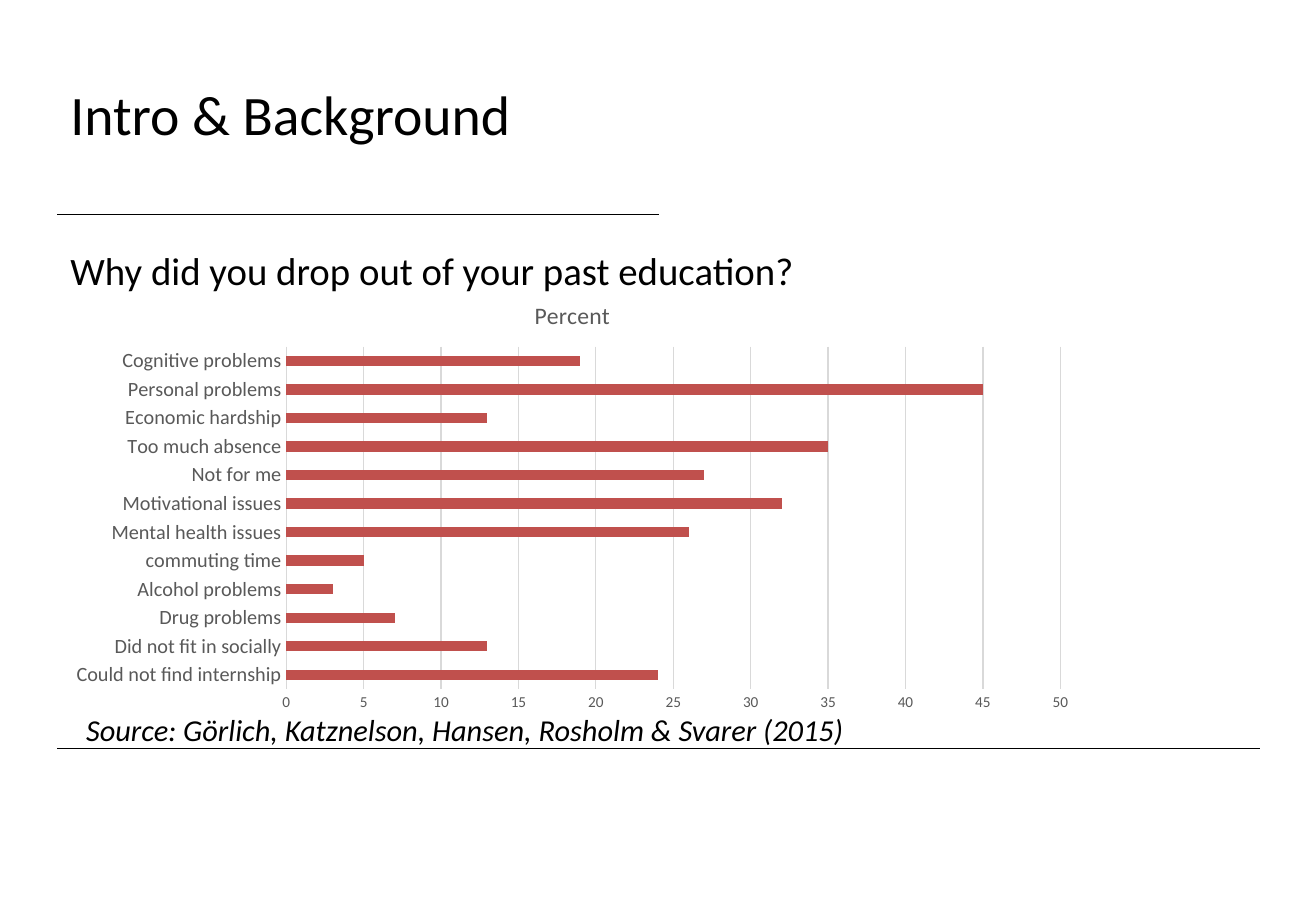
from pptx import Presentation
from pptx.chart.data import CategoryChartData
from pptx.dml.color import RGBColor
from pptx.enum.chart import XL_CHART_TYPE, XL_TICK_MARK
from pptx.enum.shapes import MSO_CONNECTOR
from pptx.enum.text import MSO_ANCHOR
from pptx.oxml.ns import qn
from pptx.util import Inches, Pt
from lxml.etree import SubElement

BLACK = RGBColor(0x00, 0x00, 0x00)
GRAY = RGBColor(0x59, 0x59, 0x59)
GRID_GRAY = RGBColor(0xD9, 0xD9, 0xD9)
BAR_RED = RGBColor(0xC0, 0x50, 0x4D)
FONT_NAME = "Calibri"

DROPOUT_REASONS = {
    "Could not find internship": 24,
    "Did not fit in socially": 13,
    "Drug problems": 7,
    "Alcohol problems": 3,
    "commuting time": 5,
    "Mental health issues": 26,
    "Motivational issues": 32,
    "Not for me": 27,
    "Too much absence": 35,
    "Economic hardship": 13,
    "Personal problems": 45,
    "Cognitive problems": 19,
}


def style_font(font, size, color, italic=False):
    font.name = FONT_NAME
    font.size = Pt(size)
    font.color.rgb = color
    font.bold = False
    font.italic = italic


def style_line(line, color, width):
    line.color.rgb = color
    line.width = Pt(width)


def add_text(slide, text, left, top, width, height, size,
             italic=False, wrap=True, inset_x=0.12, inset_y=0.06):
    box = slide.shapes.add_textbox(
        Inches(left), Inches(top), Inches(width), Inches(height))
    frame = box.text_frame
    frame.word_wrap = wrap
    frame.vertical_anchor = MSO_ANCHOR.TOP
    frame.margin_left = frame.margin_right = Inches(inset_x)
    frame.margin_top = frame.margin_bottom = Inches(inset_y)
    run = frame.paragraphs[0].add_run()
    run.text = text
    style_font(run.font, size, BLACK, italic)


def add_rule(slide, left, right, y):
    rule = slide.shapes.add_connector(
        MSO_CONNECTOR.STRAIGHT, Inches(left), Inches(y), Inches(right), Inches(y))
    style_line(rule.line, BLACK, 0.25)
    SubElement(rule._element.spPr, qn("a:effectLst"))


def style_axis(axis, size):
    axis.major_tick_mark = XL_TICK_MARK.NONE
    axis.minor_tick_mark = XL_TICK_MARK.NONE
    style_font(axis.tick_labels.font, size, GRAY)


def add_reasons_chart(slide, left, top, width, height):
    reasons = CategoryChartData()
    reasons.categories = list(DROPOUT_REASONS)
    reasons.add_series("Percent", list(DROPOUT_REASONS.values()))
    chart = slide.shapes.add_chart(
        XL_CHART_TYPE.BAR_CLUSTERED, Inches(left), Inches(top),
        Inches(width), Inches(height), reasons).chart
    style_font(chart.font, 10, BLACK)
    chart.has_legend = False
    chart.has_title = True
    chart.chart_title.include_in_layout = False
    heading = chart.chart_title.text_frame.paragraphs[0].add_run()
    heading.text = "Percent"
    style_font(heading.font, 14, GRAY)

    bars = chart.plots[0]
    bars.gap_width = 182
    bars.vary_by_categories = False
    percent = bars.series[0]
    percent.format.fill.solid()
    percent.format.fill.fore_color.rgb = BAR_RED

    style_axis(chart.category_axis, 12)
    style_line(chart.category_axis.format.line, GRID_GRAY, 0.75)

    percent_axis = chart.value_axis
    style_axis(percent_axis, 9)
    percent_axis.minimum_scale = 0
    percent_axis.maximum_scale = 50
    percent_axis.major_unit = 5
    percent_axis.format.line.fill.background()
    percent_axis.has_major_gridlines = True
    style_line(percent_axis.major_gridlines.format.line, GRID_GRAY, 0.75)


def main():
    prs = Presentation()
    prs.slide_width = Inches(10.83)
    prs.slide_height = Inches(7.5)
    slide = prs.slides.add_slide(prs.slide_layouts[6])

    add_rule(slide, 0.47, 10.37, 6.16)
    add_rule(slide, 0.47, 5.42, 1.76)
    add_text(slide, "Intro & Background", 0.46, 0.6, 4.96, 0.95, 33)
    add_text(slide, "Why did you drop out of your past education?",
             0.46, 1.97, 8.85, 3.99, 23)
    add_reasons_chart(slide, 0.46, 2.3, 8.5, 3.63)
    add_text(slide, "Source: Görlich, Katznelson, Hansen, Rosholm & Svarer (2015)",
             0.61, 5.81, 6.51, 0.4, 18, italic=True, wrap=False,
             inset_x=0.1, inset_y=0.05)

    prs.save("out.pptx")


if __name__ == "__main__":
    main()
